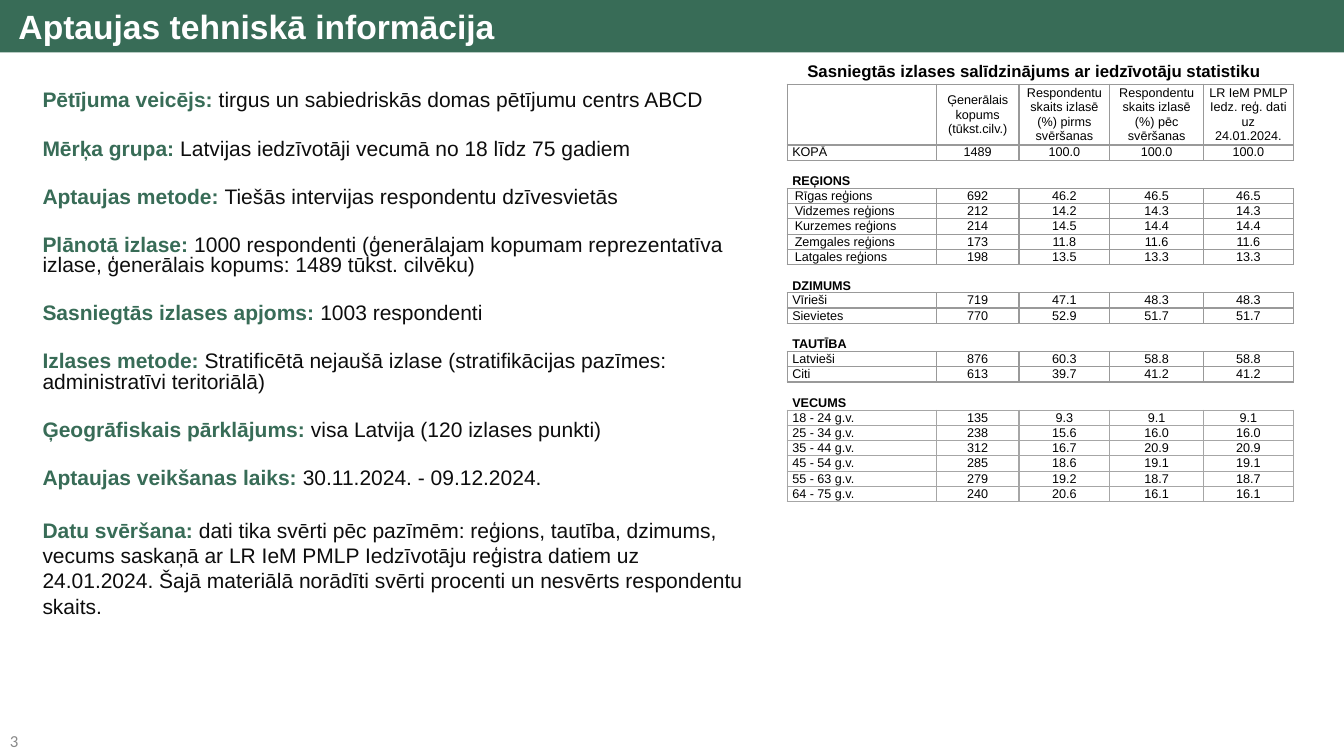
from pptx import Presentation
from pptx.dml.color import RGBColor
from pptx.enum.text import MSO_ANCHOR as ANCHOR, PP_ALIGN as ALIGN
from pptx.oxml import parse_xml
from pptx.oxml.ns import nsdecls
from pptx.util import Pt

GREEN = RGBColor(0x38, 0x6C, 0x57)
WHITE = RGBColor(0xFF, 0xFF, 0xFF)
BLACK = RGBColor(0, 0, 0)
INK = RGBColor(0x0D, 0x0D, 0x0D)
GREY = RGBColor(0x89, 0x89, 0x89)
RULE = RGBColor(0x99, 0x99, 0x99)
AGE_RULE = RGBColor(0xA6, 0xA6, 0xA6)


def style(r, size, color, bold=False, name="Arial"):
    r.font.size = Pt(size)
    r.font.color.rgb = color
    r.font.bold = bold
    r.font.name = name


def add_border(cell, side, color):
    fill = "<a:noFill/>"
    if color is not None:
        fill = f'<a:solidFill><a:srgbClr val="{color}"/></a:solidFill>'
    cell._tc.get_or_add_tcPr().append(
        parse_xml(f'<a:ln{side} {nsdecls("a")} w="{Pt(1)}">{fill}</a:ln{side}>')
    )


prs = Presentation()
prs.slide_width, prs.slide_height = Pt(960), Pt(540)
s = prs.slides.add_slide(prs.slide_layouts[5])

title = s.shapes.title
title.left, title.top, title.width, title.height = Pt(0), Pt(0), Pt(960), Pt(37.5)
title.fill.solid()
title.fill.fore_color.rgb = GREEN
tf = title.text_frame
tf.text = "Aptaujas tehniskā informācija"
tf.margin_left = Pt(13.2)
tf.vertical_anchor = ANCHOR.MIDDLE
tf.paragraphs[0].alignment = ALIGN.LEFT
style(tf.paragraphs[0].runs[0], 24, WHITE, True)

facts = [
    ("Pētījuma veicējs: ", "tirgus un sabiedriskās domas pētījumu centrs ABCD"),
    ("Mērķa grupa: ", "Latvijas iedzīvotāji vecumā no 18 līdz 75 gadiem"),
    ("Aptaujas metode: ", "Tiešās intervijas respondentu dzīvesvietās"),
    ("Plānotā izlase: ", "1000 respondenti (ģenerālajam kopumam reprezentatīva "
     "izlase, ģenerālais kopums: 1489 tūkst. cilvēku)"),
    ("Sasniegtās izlases apjoms: ", "1003 respondenti"),
    ("Izlases metode: ", "Stratificētā nejaušā izlase (stratifikācijas pazīmes: "
     "administratīvi teritoriālā)"),
    ("Ģeogrāfiskais pārklājums: ", "visa Latvija (120 izlases punkti)"),
    ("Aptaujas veikšanas laiks: ", "30.11.2024. - 09.12.2024."),
    ("Datu svēršana: ", "dati tika svērti pēc pazīmēm: reģions, tautība, dzimums, "
     "vecums saskaņā ar LR IeM PMLP Iedzīvotāju reģistra datiem uz 24.01.2024. "
     "Šajā materiālā norādīti svērti procenti un nesvērts respondentu skaits."),
]
tf = s.shapes.add_textbox(Pt(23.3), Pt(62), Pt(520), Pt(391.5)).text_frame
tf.word_wrap = True
for i, (label, value) in enumerate(facts):
    p = tf.add_paragraph() if i else tf.paragraphs[0]
    p.space_before = Pt(20)
    p.line_spacing = 0.8 if i < len(facts) - 1 else 1.0
    for text, color, bold in ((label, GREEN, True), (value, INK, False)):
        r = p.add_run()
        r.text = text
        style(r, 15, color, bold)

rows = [
    ("", "Ģenerālais kopums\n(tūkst.cilv.)",
     "Respondentu skaits izlasē (%) pirms svēršanas",
     "Respondentu skaits izlasē (%) pēc svēršanas",
     "LR IeM PMLP Iedz. reģ. dati uz 24.01.2024."),
    ("KOPĀ", "1489", "100.0", "100.0", "100.0"),
    ("REĢIONS",),
    ("Rīgas reģions", "692", "46.2", "46.5", "46.5"),
    ("Vidzemes reģions", "212", "14.2", "14.3", "14.3"),
    ("Kurzemes reģions", "214", "14.5", "14.4", "14.4"),
    ("Zemgales reģions", "173", "11.8", "11.6", "11.6"),
    ("Latgales reģions", "198", "13.5", "13.3", "13.3"),
    ("DZIMUMS",),
    ("Vīrieši", "719", "47.1", "48.3", "48.3"),
    ("Sievietes", "770", "52.9", "51.7", "51.7"),
    ("TAUTĪBA",),
    ("Latvieši", "876", "60.3", "58.8", "58.8"),
    ("Citi", "613", "39.7", "41.2", "41.2"),
    ("VECUMS",),
    ("18 - 24 g.v.", "135", "9.3", "9.1", "9.1"),
    ("25 - 34 g.v.", "238", "15.6", "16.0", "16.0"),
    ("35 - 44 g.v.", "312", "16.7", "20.9", "20.9"),
    ("45 - 54 g.v.", "285", "18.6", "19.1", "19.1"),
    ("55 - 63 g.v.", "279", "19.2", "18.7", "18.7"),
    ("64 - 75 g.v.", "240", "20.6", "16.1", "16.1"),
]
col_widths = [106.6, 59, 64.8, 67, 64.1]
line_height = 10.13
table = s.shapes.add_table(
    len(rows), len(col_widths), Pt(562.3), Pt(60.2),
    Pt(sum(col_widths)), Pt(28 * line_height),
).table
table.first_row = table.horz_banding = False
for column, width in zip(table.columns, col_widths):
    column.width = Pt(width)

group = ""
for i, values in enumerate(rows):
    is_group = len(values) == 1
    if is_group:
        group = values[0]
    lines = 4 if i == 0 else 2 if is_group else 1
    table.rows[i].height = Pt(lines * line_height)
    rule = AGE_RULE if group == "VECUMS" and not is_group else RULE
    bottom = AGE_RULE if group == "VECUMS" else RULE
    side = None if is_group else rule
    for j in range(len(col_widths)):
        cell = table.cell(i, j)
        cell.text = values[j] if j < len(values) else ""
        cell.margin_top = cell.margin_bottom = Pt(0)
        inset = 5.4 if group == "REĢIONS" and not is_group else 3.6
        cell.margin_left = cell.margin_right = Pt(inset)
        cell.vertical_anchor = ANCHOR.BOTTOM if is_group else ANCHOR.MIDDLE
        for p in cell.text_frame.paragraphs:
            p.alignment = ALIGN.CENTER if j else ALIGN.LEFT
            for r in p.runs:
                style(r, 9, BLACK, is_group)
            if not p.runs:
                p._p.get_or_add_endParaRPr().set("sz", "900")
        for edge, color in (("L", side), ("R", side), ("T", rule), ("B", bottom)):
            add_border(cell, edge, color)
        cell.fill.background()

caption = "Sasniegtās izlases salīdzinājums ar iedzīvotāju statistiku"
labels = [
    (caption, 526.3, 39.6, 424.8, 21.8, ALIGN.CENTER, 12, BLACK, True, "Arial"),
    ("3", 0, 517.7, 106.6, 22.3, ALIGN.LEFT, 12, GREY, False, "Calibri"),
]
for text, x, y, w, h, align, size, color, bold, name in labels:
    tf = s.shapes.add_textbox(Pt(x), Pt(y), Pt(w), Pt(h)).text_frame
    tf.word_wrap = True
    tf.vertical_anchor = ANCHOR.MIDDLE
    tf.text = text
    tf.paragraphs[0].alignment = align
    style(tf.paragraphs[0].runs[0], size, color, bold, name)

prs.save("out.pptx")
